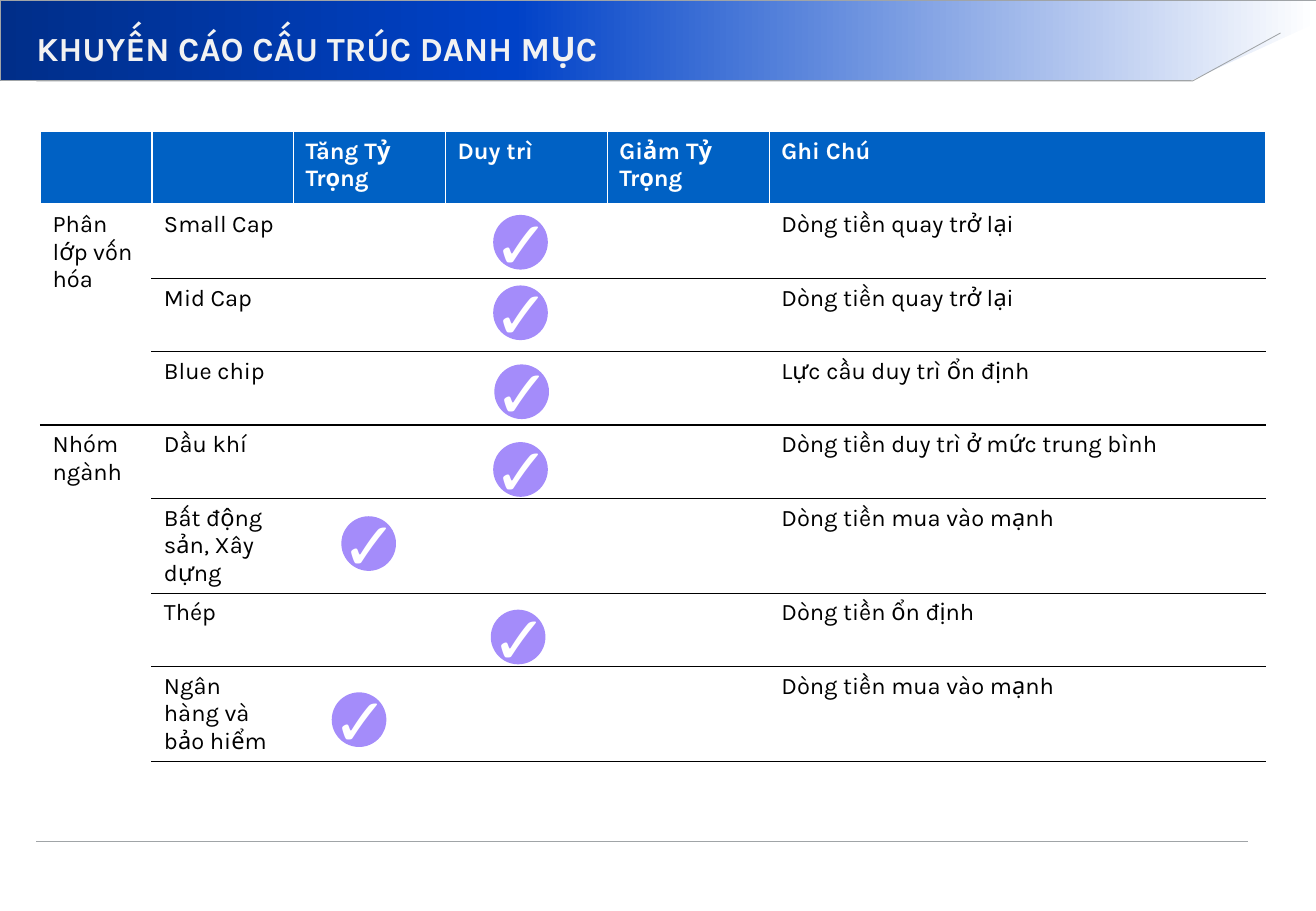
from copy import deepcopy

from lxml import etree
from pptx import Presentation
from pptx.dml.color import RGBColor
from pptx.enum.shapes import MSO_CONNECTOR, MSO_SHAPE
from pptx.enum.text import MSO_ANCHOR, MSO_AUTO_SIZE, PP_ALIGN
from pptx.oxml.ns import qn
from pptx.util import Pt

RECT, OVAL, TRIANGLE = MSO_SHAPE.RECTANGLE, MSO_SHAPE.OVAL, MSO_SHAPE.RIGHT_TRIANGLE
STRAIGHT = MSO_CONNECTOR.STRAIGHT
MIDDLE, LEFT, CENTER = MSO_ANCHOR.MIDDLE, PP_ALIGN.LEFT, PP_ALIGN.CENTER
GROW = MSO_AUTO_SIZE.SHAPE_TO_FIT_TEXT

COLORS = {"navy": "002E89", "royal": "0042C8", "white": "FFFFFF", "grey": "A0A4A7",
          "title": "F2F2F2", "header": "0061C4", "black": "000000", "tick": "A48CFA"}
FONT, TICK_FONT = "Karla", "Arial"

COLUMNS = [66, 84, 90, 96, 96, 294]
ROW_H, TALL_ROW_H = 43.5, 56
TALL_ROWS = {5, 7}
GROUP_ROWS = [(1, 3), (4, 7)]
ROWS = [
    ["", "", "Tăng Tỷ Trọng", "Duy trì", "Giảm Tỷ Trọng", "Ghi Chú"],
    ["Phân lớp vốn hóa", "Small Cap", "", "", "", "Dòng tiền quay trở lại"],
    ["", "Mid Cap", "", "", "", "Dòng tiền quay trở lại"],
    ["", "Blue chip", "", "", "", "Lực cầu duy trì ổn định"],
    ["Nhóm ngành", "Dầu khí", "", "", "", "Dòng tiền duy trì ở mức trung bình"],
    ["", "Bất động sản, Xây dựng", "", "", "", "Dòng tiền mua vào mạnh"],
    ["", "Thép", "", "", "", "Dòng tiền ổn định"],
    ["", "Ngân hàng và bảo hiểm", "", "", "", "Dòng tiền mua vào mạnh"],
]
# Tick discs, left and top within the table box
TICKS = [(268.3, 49.4), (268.3, 91.2), (269, 138), (268.3, 184.1),
         (178.3, 228), (266.9, 283.4), (172.6, 332.4)]


def rgb(name):
    return RGBColor.from_string(COLORS[name])


def set_font(p, font, size, color, bold=False):
    p.font.name, p.font.size, p.font.bold = font, Pt(size), bold
    p.font.color.rgb = rgb(color)


def add_filled(shapes, kind, x, y, w, h, color):
    s = shapes.add_shape(kind, Pt(x), Pt(y), Pt(w), Pt(h))
    s.shadow.inherit = False
    s.fill.solid()
    s.fill.fore_color.rgb = rgb(color)
    s.line.fill.background()
    return s


def set_thin_line(s):
    s.line.color.rgb = rgb("grey")
    s.line.width = Pt(0.5)


def add_header(slide, x, y, w, h):
    # Gradient band
    band = add_filled(slide.shapes, RECT, x, y, w, h, "navy")
    band.fill.gradient()
    band.fill.gradient_angle = 0
    first = band._element.spPr.find(".//" + qn("a:gs"))
    first.addnext(deepcopy(first))
    stops = [(0, "navy"), (0.39, "royal"), (1, "white")]
    for stop, (position, color) in zip(band.fill.gradient_stops, stops):
        stop.position = position
        stop.color.rgb = rgb(color)
    set_thin_line(band)

    # Cut corner and its outline
    corner = add_filled(slide.shapes, TRIANGLE, x + w - 78, y + 13.7, 78, 36, "white")
    corner._element.spPr.xfrm.set("flipH", "1")
    builder = slide.shapes.build_freeform(Pt(x + 21.6), Pt(y + h))
    builder.add_line_segments([(Pt(x + 707), Pt(y + h)), (Pt(x + 759), Pt(y + 19.6))], close=False)
    edge = builder.convert_to_shape()
    edge.shadow.inherit = False
    edge.fill.background()
    set_thin_line(edge)

    # Title, in front of the band
    title = slide.shapes.title
    title.left, title.top, title.width, title.height = Pt(x + 21.6), Pt(y + 13), Pt(682), Pt(31)
    slide.shapes._spTree.append(title._element)
    tf = title.text_frame
    tf.margin_left = tf.margin_top = tf.margin_right = tf.margin_bottom = 0
    tf.vertical_anchor, tf.word_wrap = MIDDLE, True
    tf.auto_size = MSO_AUTO_SIZE.NONE
    tf.text = "KHUYẾN CÁO CẤU TRÚC DANH MỤC"
    tf.paragraphs[0].alignment = LEFT
    set_font(tf.paragraphs[0], FONT, 20, "title", True)


def add_footer_line(slide, x, y, w):
    line = slide.shapes.add_connector(STRAIGHT, Pt(x), Pt(y), Pt(x + w), Pt(y))
    set_thin_line(line)
    etree.SubElement(line._element.spPr, qn("a:effectLst"))


def set_borders(cell, top, bottom, bottom_width):
    tc_pr = cell._tc.get_or_add_tcPr()
    edges = [("L", "white", 1), ("R", "white", 1), ("T", top, 1), ("B", bottom, bottom_width)]
    for i, (side, color, width) in enumerate(edges):
        ln = etree.Element(qn("a:ln" + side), w=str(Pt(width)))
        fill = etree.SubElement(ln, qn("a:solidFill"))
        etree.SubElement(fill, qn("a:srgbClr"), val=COLORS[color])
        tc_pr.insert(i, ln)


def add_recommendations(slide, x, y):
    heights = [TALL_ROW_H if i in TALL_ROWS else ROW_H for i in range(len(ROWS))]
    table = slide.shapes.add_table(len(ROWS), len(COLUMNS), Pt(x), Pt(y),
                                   Pt(sum(COLUMNS)), Pt(sum(heights))).table
    table.first_row = table.horz_banding = False
    for column, width in zip(table.columns, COLUMNS):
        column.width = Pt(width)
    for row, height in zip(table.rows, heights):
        row.height = Pt(height)
    for first, last in GROUP_ROWS:
        table.cell(first, 0).merge(table.cell(last, 0))

    for i, texts in enumerate(ROWS):
        header = i == 0
        for j, text in enumerate(texts):
            cell = table.cell(i, j)
            if header:
                cell.fill.solid()
                cell.fill.fore_color.rgb = rgb("header")
            else:
                cell.fill.background()
            # The group column is ruled only between its two groups
            top = "black" if (i > 1 if j else i == 4) else "white"
            bottom = "black" if (i > 0 if j else i == 3) else "white"
            set_borders(cell, top, bottom, 3 if header else 1)
            if text:
                cell.text = text
                set_font(cell.text_frame.paragraphs[0], FONT, 14,
                         "white" if header else "black", header)

    for dx, dy in TICKS:
        add_tick(slide, x + dx, y + dy, 32.4)


def add_tick(slide, x, y, size):
    shapes = slide.shapes.add_group_shape().shapes
    add_filled(shapes, OVAL, x, y, size, size, "tick")
    box = shapes.add_textbox(Pt(x - 10.4), Pt(y - 11.5), Pt(54.7), Pt(55.4))
    tf = box.text_frame
    tf.word_wrap, tf.auto_size, tf.vertical_anchor = False, GROW, MIDDLE
    tf.text = "✓"
    tf.paragraphs[0].alignment = CENTER
    set_font(tf.paragraphs[0], TICK_FONT, 40, "white")


def main():
    prs = Presentation()
    prs.slide_width, prs.slide_height = Pt(780), Pt(540)
    slide = prs.slides.add_slide(prs.slide_layouts[5])
    add_header(slide, 0, 0, 780, 48)
    add_footer_line(slide, 21.6, 499, 718)
    add_recommendations(slide, 24, 78)
    prs.save("out.pptx")


if __name__ == "__main__":
    main()
